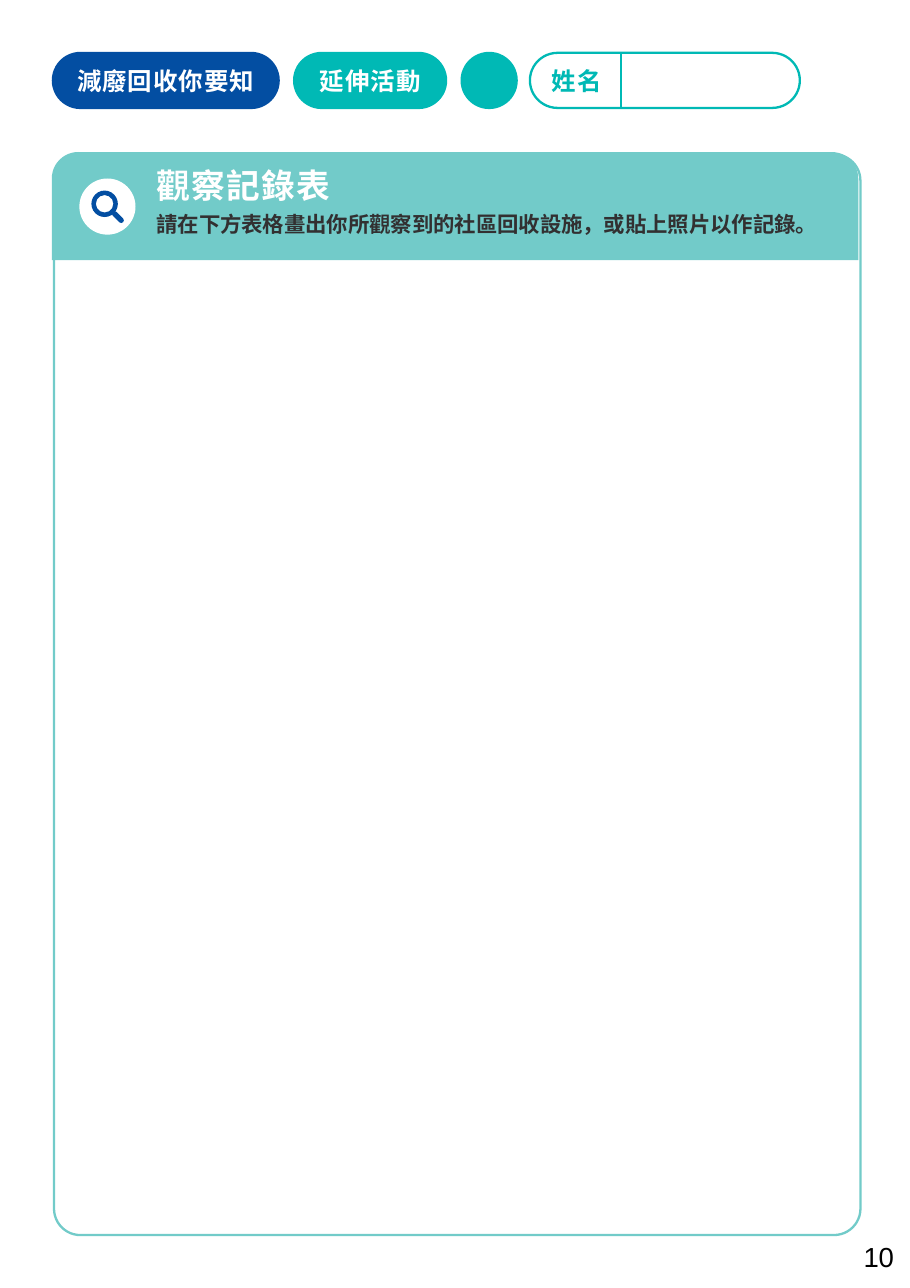
from lxml import etree
from pptx import Presentation
from pptx.dml.color import RGBColor
from pptx.enum.shapes import MSO_CONNECTOR, MSO_SHAPE
from pptx.enum.text import MSO_ANCHOR, PP_ALIGN
from pptx.oxml.ns import qn
from pptx.util import Emu, Pt

PX = 9144  # 100 px to the inch
TITLE_ONLY = 5
PILL, DISC, RING = MSO_SHAPE.ROUNDED_RECTANGLE, MSO_SHAPE.OVAL, MSO_SHAPE.DONUT
BAND = MSO_SHAPE.ROUND_2_SAME_RECTANGLE
STRAIGHT = MSO_CONNECTOR.STRAIGHT
LEFT, CENTER = PP_ALIGN.LEFT, PP_ALIGN.CENTER
TOP, MIDDLE = MSO_ANCHOR.TOP, MSO_ANCHOR.MIDDLE

NAVY = RGBColor(0x03, 0x4E, 0xA2)
TEAL = RGBColor(0x00, 0xB9, 0xB5)
AQUA = RGBColor(0x72, 0xCB, 0xC9)
INK = RGBColor(0x32, 0x30, 0x31)
WHITE = RGBColor(0xFF, 0xFF, 0xFF)
BLACK = RGBColor(0x00, 0x00, 0x00)


class Worksheet:
    font = "Noto Sans CJK SC"
    line_width = 1.5

    def __init__(self, slide):
        self.slide = slide

    def shape(self, kind, box, fill=None, line=None, adjust=None):
        shape = self.slide.shapes.add_shape(kind, *(Emu(v * PX) for v in box))
        shape.shadow.inherit = False
        if adjust is not None:
            shape.adjustments[0] = adjust
        if fill is None:
            shape.fill.background()
        else:
            shape.fill.solid()
            shape.fill.fore_color.rgb = fill
        if line is None:
            shape.line.fill.background()
        else:
            shape.line.color.rgb = line
            shape.line.width = Pt(self.line_width)
        return shape

    def line(self, start, end, color, width=line_width):
        ends = (Emu(v * PX) for v in (*start, *end))
        connector = self.slide.shapes.add_connector(STRAIGHT, *ends)
        connector.line.color.rgb = color
        connector.line.width = Pt(width)
        connector.line._get_or_add_ln().set("cap", "rnd")
        etree.SubElement(connector._element.spPr, qn("a:effectLst"))

    def label(self, shape, text, size, color, align=LEFT, anchor=TOP,
              spacing=0.0, bold=True, font=font):
        """Fill a shape with one styled line; spacing is in points."""
        frame = shape.text_frame
        frame.text = text
        frame.word_wrap = False
        frame.vertical_anchor = anchor
        frame.margin_left = frame.margin_right = 0
        frame.margin_top = frame.margin_bottom = 0
        paragraph = frame.paragraphs[0]
        paragraph.alignment = align
        run = paragraph.runs[0]
        run.font.size, run.font.bold, run.font.name = Pt(size), bold, font
        run.font.color.rgb = color
        properties = run._r.get_or_add_rPr()
        properties.set("spc", str(round(spacing * 100)))
        etree.SubElement(properties, qn("a:ea")).set("typeface", font)

    def text(self, box, *content, **style):
        textbox = self.slide.shapes.add_textbox(*(Emu(v * PX) for v in box))
        self.label(textbox, *content, **style)

    def title(self, box, *content, **style):
        title = self.slide.shapes.title
        title.left, title.top, title.width, title.height = (
            Emu(v * PX) for v in box)
        self.label(title, *content, **style)
        self.slide.shapes._spTree.append(title._element)  # bring to front

    def tag(self, box, text, fill):
        pill = self.shape(PILL, box, fill=fill, adjust=0.5)
        self.label(pill, text, 16, WHITE, align=CENTER, anchor=MIDDLE,
                   spacing=0.7)


def main():
    deck = Presentation()
    deck.slide_width, deck.slide_height = Emu(826 * PX), Emu(1169 * PX)
    sheet = Worksheet(deck.slides.add_slide(deck.slide_layouts[TITLE_ONLY]))

    # Header row
    sheet.tag((47, 47, 207, 52), "減廢回收你要知", NAVY)
    sheet.tag((266, 47, 140, 52), "延伸活動", TEAL)
    sheet.shape(DISC, (418, 47, 52, 52), fill=TEAL)
    sheet.shape(PILL, (481, 48, 245, 50), line=TEAL, adjust=0.5)
    sheet.line((564, 49), (564, 97), TEAL)
    sheet.text((501, 48, 49, 50), "姓名", 16, TEAL, anchor=MIDDLE, spacing=0.6)

    # Record frame
    radius = 24
    frame_width, band_height = 732, 98
    sheet.shape(PILL, (49, 140, frame_width, 981), line=AQUA,
                adjust=radius / frame_width)
    sheet.shape(BAND, (47, 138, frame_width, band_height), fill=AQUA,
                adjust=radius / band_height)

    # Magnifier
    sheet.shape(DISC, (72, 162, 51, 51), fill=WHITE)
    sheet.shape(RING, (83, 173, 24, 24), fill=NAVY, adjust=0.17)
    sheet.line((104, 194), (110, 200), NAVY, width=3.5)

    sheet.title((142, 150, 621, 44), "觀察記錄表", 22, WHITE, spacing=1)
    sheet.text((142, 192, 621, 29),
               "請在下方表格畫出你所觀察到的社區回收設施，或貼上照片以作記錄。",
               14, INK, spacing=-0.1)
    sheet.text((784, 1125, 33, 30), "10", 18, BLACK, spacing=-0.2,
               bold=False, font="Arial")
    deck.save("out.pptx")


if __name__ == "__main__":
    main()
